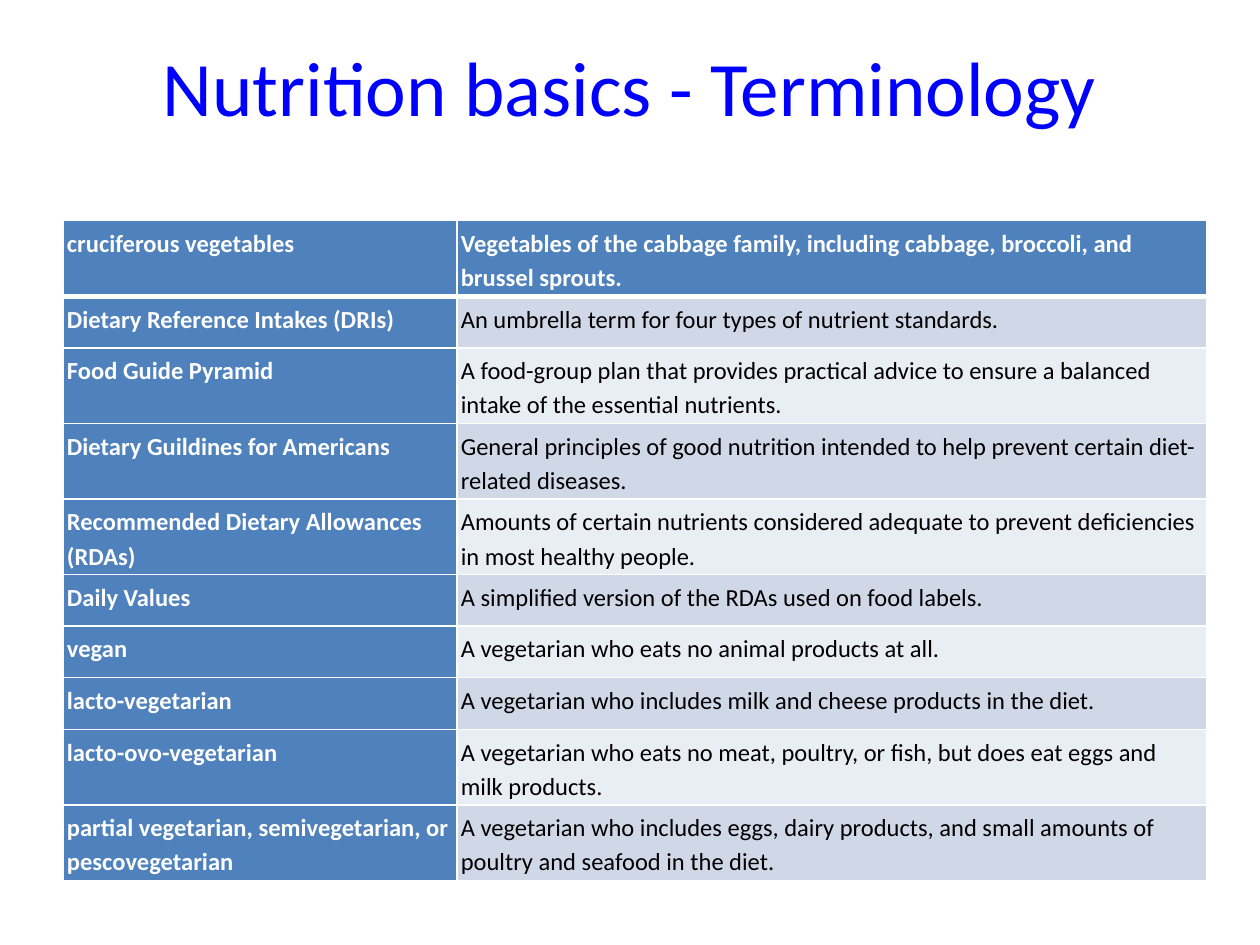
import dataclasses

import lxml.etree
import pptx
import pptx.dml.color
import pptx.enum.text
import pptx.oxml.ns
import pptx.slide
import pptx.table
import pptx.text.text
import pptx.util

Cm = pptx.util.Cm
Pt = pptx.util.Pt
qn = pptx.oxml.ns.qn


@dataclasses.dataclass(frozen=True)
class Theme:
    font: str = "Calibri"
    title: str = "0000FF"
    head: str = "4F81BD"
    odd: str = "D0D8E8"
    even: str = "E9EDF4"
    light: str = "FFFFFF"
    dark: str = "000000"
    big: int = 44
    small: int = 14
    thin: int = 1
    thick: int = 3


@dataclasses.dataclass(frozen=True)
class Entry:
    term: str
    sense: str
    tall: bool = False


THEME = Theme()
WIDTHS = (Cm(7.94), Cm(15.12))
LOW, HIGH = Cm(1.04), Cm(1.47)
INSET = Cm(0.08)

ENTRIES = (
    Entry("cruciferous vegetables",
          "Vegetables of the cabbage family, including cabbage, broccoli, and brussel sprouts.", True),
    Entry("Dietary Reference Intakes (DRIs)",
          "An umbrella term for four types of nutrient standards."),
    Entry("Food Guide Pyramid",
          "A food-group plan that provides practical advice to ensure a balanced intake of the essential nutrients.", True),
    Entry("Dietary Guildines for Americans",
          "General principles of good nutrition intended to help prevent certain diet-related diseases.", True),
    Entry("Recommended Dietary Allowances (RDAs)",
          "Amounts of certain nutrients considered adequate to prevent deficiencies in most healthy people.", True),
    Entry("Daily Values",
          "A simplified version of the RDAs used on food labels."),
    Entry("vegan",
          "A vegetarian who eats no animal products at all."),
    Entry("lacto-vegetarian",
          "A vegetarian who includes milk and cheese products in the diet."),
    Entry("lacto-ovo-vegetarian",
          "A vegetarian who eats no meat, poultry, or fish, but does eat eggs and milk products."),
    Entry("partial vegetarian, semivegetarian, or pescovegetarian",
          "A vegetarian who includes eggs, dairy products, and small amounts of poultry and seafood in the diet.", True),
)


def style(par: pptx.text.text._Paragraph, size: int, color: str, bold: bool) -> None:
    for run in par.runs:
        run.font.name = THEME.font
        run.font.size = Pt(size)
        run.font.bold = bold
        run.font.color.rgb = pptx.dml.color.RGBColor.from_string(color)


def border(cell: pptx.table._Cell, side: str, width: int) -> None:
    props = cell._tc.get_or_add_tcPr()
    line = lxml.etree.SubElement(props, qn(f"a:ln{side}"), w=str(Pt(width)))
    fill = lxml.etree.SubElement(line, qn("a:solidFill"))
    lxml.etree.SubElement(fill, qn("a:srgbClr"), val=THEME.light)


def draw_cell(cell: pptx.table._Cell, text: str, row: int, strong: bool) -> None:
    cell.margin_left = cell.margin_right = INSET
    cell.margin_top = cell.margin_bottom = INSET
    border(cell, "L", THEME.thin)
    border(cell, "R", THEME.thin)
    border(cell, "T", THEME.thick if row == 1 else THEME.thin)
    border(cell, "B", THEME.thick if row == 0 else THEME.thin)
    band = THEME.odd if row % 2 else THEME.even
    cell.fill.solid()
    cell.fill.fore_color.rgb = pptx.dml.color.RGBColor.from_string(THEME.head if strong else band)
    par = cell.text_frame.paragraphs[0]
    par.text = text
    par.line_spacing = 1.15
    style(par, THEME.small, THEME.light if strong else THEME.dark, strong)


def draw_title(slide: pptx.slide.Slide, text: str) -> None:
    box = slide.shapes.add_textbox(Cm(1.27), Cm(0.13), Cm(22.86), Cm(3.18))
    frame = box.text_frame
    frame.word_wrap = True
    frame.vertical_anchor = pptx.enum.text.MSO_ANCHOR.MIDDLE
    par = frame.paragraphs[0]
    par.text = text
    par.alignment = pptx.enum.text.PP_ALIGN.CENTER
    style(par, THEME.big, THEME.title, False)


def draw_table(slide: pptx.slide.Slide, entries: tuple[Entry, ...]) -> None:
    heights = [HIGH if entry.tall else LOW for entry in entries]
    frame = slide.shapes.add_table(len(entries), len(WIDTHS), Cm(1.27), Cm(4.45),
                                   sum(WIDTHS), sum(heights))
    table = frame.table
    table.horz_banding = False
    for col, width in zip(table.columns, WIDTHS):
        col.width = width
    for row, (entry, height) in enumerate(zip(entries, heights)):
        table.rows[row].height = height
        draw_cell(table.cell(row, 0), entry.term, row, True)
        draw_cell(table.cell(row, 1), entry.sense, row, row == 0)


def main() -> None:
    deck = pptx.Presentation()
    deck.slide_width, deck.slide_height = Cm(25.4), Cm(19.05)
    slide = deck.slides.add_slide(deck.slide_layouts[6])
    draw_title(slide, "Nutrition basics - Terminology")
    draw_table(slide, ENTRIES)
    deck.save("out.pptx")


if __name__ == "__main__":
    main()
